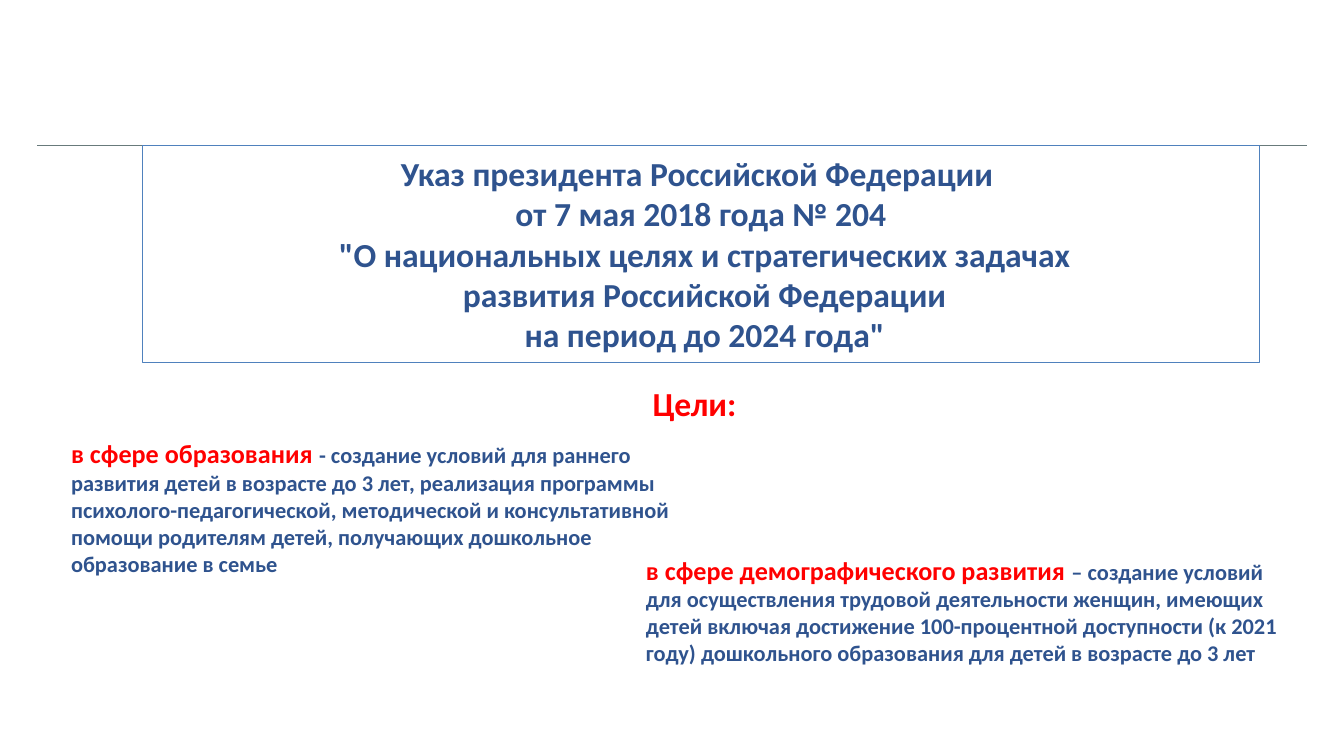
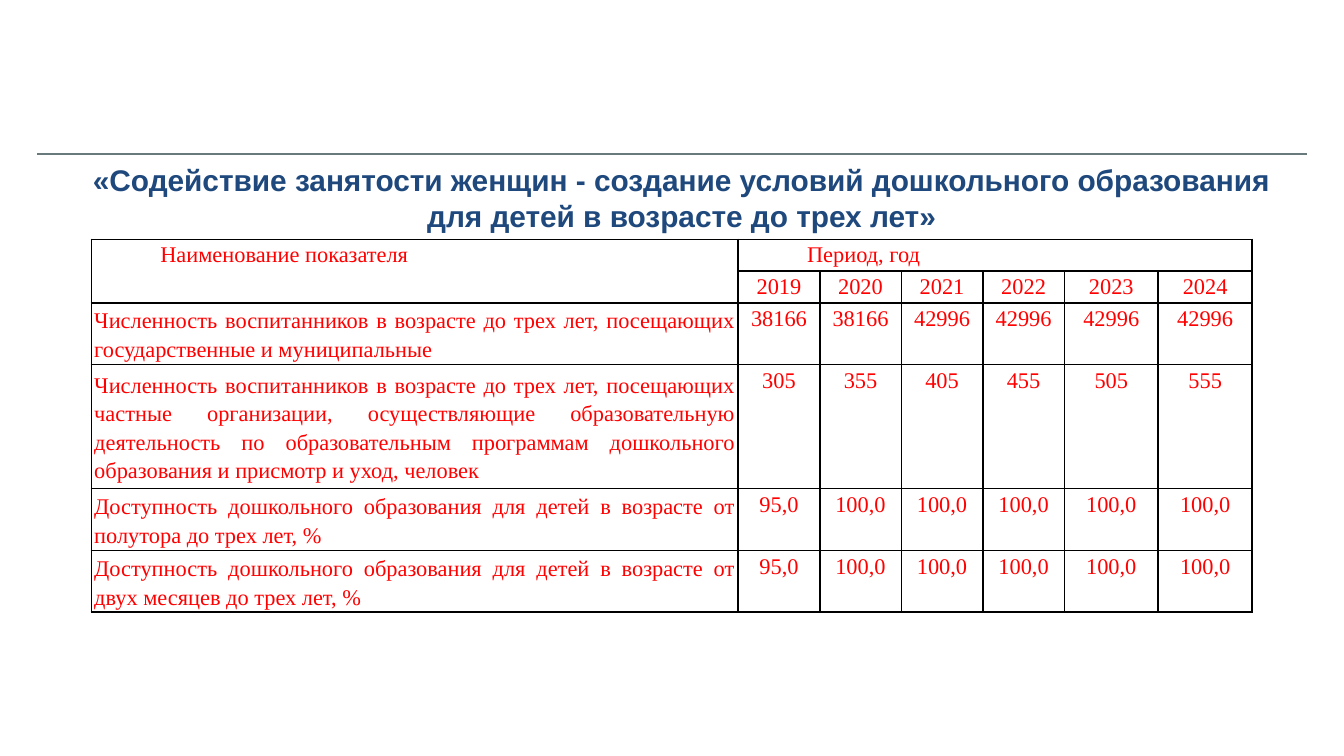
from pptx import Presentation
from pptx.dml.color import RGBColor
from pptx.enum.shapes import MSO_CONNECTOR, MSO_SHAPE
from pptx.enum.text import MSO_ANCHOR, PP_ALIGN
from pptx.oxml.ns import qn
from pptx.util import Pt
from lxml.etree import SubElement

COLORS = {
    "navy": "2F538E",
    "title": "1F497D",
    "red": "FF0000",
    "frame": "4F81BD",
    "rule": "687A7B",
    "black": "000000",
}
LEFT, CENTER, JUSTIFY = PP_ALIGN.LEFT, PP_ALIGN.CENTER, PP_ALIGN.JUSTIFY


def rgb(name):
    return RGBColor.from_string(COLORS[name])


class Deck:
    """Holds the shared style and the current slide."""

    def __init__(self):
        self.prs = Presentation()
        self.prs.slide_width, self.prs.slide_height = Pt(720), Pt(405)
        self.s = None

    def slide(self, rule_y):
        self.s = self.prs.slides.add_slide(self.prs.slide_layouts[6])
        self.rule(rule_y)

    def rule(self, y):
        line = self.s.shapes.add_connector(
            MSO_CONNECTOR.STRAIGHT, Pt(20), Pt(y), Pt(700), Pt(y))
        line.line.color.rgb = rgb("rule")
        line.line.width = Pt(0.75)
        SubElement(line._element.spPr, qn("a:effectLst"))

    def add_text(self, tf, paragraphs, font="Calibri", bold=True, align=LEFT, spacing=None):
        """Each paragraph is a list of runs (text, size, colour)."""
        for i, runs in enumerate(paragraphs):
            p = tf.paragraphs[0] if i == 0 else tf.add_paragraph()
            p.alignment = align
            if spacing:
                p.line_spacing = spacing
            for text, size, color in runs:
                r = p.add_run()
                r.text = text
                r.font.name, r.font.size, r.font.bold = font, Pt(size), bold
                r.font.color.rgb = rgb(color)

    def text(self, x, y, w, h, paragraphs, anchor=MSO_ANCHOR.TOP, **style):
        tf = self.s.shapes.add_textbox(Pt(x), Pt(y), Pt(w), Pt(h)).text_frame
        tf.word_wrap = True
        tf.vertical_anchor = anchor
        self.add_text(tf, paragraphs, **style)
        return tf

    def frame(self, x, y, w, h, paragraphs):
        sp = self.s.shapes.add_shape(MSO_SHAPE.RECTANGLE, Pt(x), Pt(y), Pt(w), Pt(h))
        sp.shadow.inherit = False
        sp.fill.background()
        sp.line.color.rgb = rgb("frame")
        sp.line.width = Pt(0.75)
        sp.text_frame.word_wrap = True
        self.add_text(sp.text_frame, paragraphs, align=CENTER)

    def table(self, x, y, widths, heights):
        shape = self.s.shapes.add_table(
            len(heights), len(widths), Pt(x), Pt(y), Pt(sum(widths)), Pt(sum(heights)))
        table = shape.table
        for col, w in zip(table.columns, widths):
            col.width = Pt(w)
        for row, h in zip(table.rows, heights):
            row.height = Pt(h)
        for cell in table.iter_cells():
            cell.margin_left = cell.margin_right = Pt(1.5)
            cell.margin_top = cell.margin_bottom = 0
            self.borders(cell)
            cell.fill.background()
        return table

    def borders(self, cell):
        tc_pr = cell._tc.get_or_add_tcPr()
        for side in ("a:lnL", "a:lnR", "a:lnT", "a:lnB"):
            ln = SubElement(tc_pr, qn(side), w=str(Pt(1)))
            fill = SubElement(ln, qn("a:solidFill"))
            SubElement(fill, qn("a:srgbClr"), val=COLORS["black"])

    def cell(self, cell, text, align=CENTER, anchor=MSO_ANCHOR.TOP, indent=0):
        cell.vertical_anchor = anchor
        self.add_text(cell.text_frame, [[(text, 12, "red")]], "Times New Roman",
                      bold=False, align=align, spacing=1.15)
        if indent:
            p_pr = cell.text_frame.paragraphs[0]._p.get_or_add_pPr()
            p_pr.set("marL", "0")
            p_pr.set("indent", str(Pt(indent)))


def goals_slide(deck):
    deck.slide(rule_y=77.8)

    # Decree
    decree = [
        "Указ президента Российской Федерации ",
        "от 7 мая 2018 года № 204",
        " \"О национальных целях и стратегических задачах",
        " развития Российской Федерации",
        " на период до 2024 года\"",
    ]
    deck.frame(76.3, 77.8, 598.5, 116.4, [[(line, 18, "navy")] for line in decree])

    # Goals
    goals = [
        (31, 231, "в сфере образования ",
         "- создание условий для раннего развития детей в возрасте до 3 лет, "
         "реализация программы психолого-педагогической, методической и консультативной "
         "помощи родителям детей, получающих дошкольное образование в семье"),
        (339, 293.3, "в сфере демографического развития ",
         "– создание условий для осуществления трудовой деятельности женщин, имеющих "
         "детей включая достижение 100-процентной доступности (к 2021 году) "
         "дошкольного образования для детей в возрасте до 3 лет"),
    ]
    for x, y, area, goal in goals:
        deck.text(x, y, 360, 82, [[(area, 14, "red"), (goal, 12, "navy")]])
    deck.text(342.5, 201.7, 67, 29, [[("Цели:", 18, "red")]])


def indicators_slide(deck):
    deck.slide(rule_y=82.5)

    # Title
    title = ("«Содействие занятости женщин - создание условий дошкольного образования "
             "для детей в возрасте до трех лет»")
    tf = deck.text(25, 82, 680.5, 47.5, [[(title, 16, "title")]],
                   anchor=MSO_ANCHOR.MIDDLE, font="Arial", align=CENTER)
    tf.margin_left = tf.margin_right = Pt(8.5)
    tf.margin_top = tf.margin_bottom = Pt(4.25)

    # Table header
    table = deck.table(49, 128.2, [346.5] + [43.7] * 4 + [50.3] * 2,
                       [17, 17, 33.2, 66.4, 33, 33])
    table.cell(0, 0).merge(table.cell(1, 0))
    table.cell(0, 1).merge(table.cell(0, 6))
    for col, text in enumerate(("Наименование показателя", "Период, год")):
        deck.cell(table.cell(0, col), text, JUSTIFY, indent=35.4)
    for col in range(1, 7):
        deck.cell(table.cell(1, col), str(2018 + col))

    # Table body
    indicators = [
        ("Численность воспитанников в возрасте до трех лет, посещающих "
         "государственные и муниципальные",
         ["38166"] * 2 + ["42996"] * 4),
        ("Численность воспитанников в возрасте до трех лет, посещающих частные "
         "организации, осуществляющие образовательную деятельность по образовательным "
         "программам дошкольного образования и присмотр и уход, человек",
         ["305", "355", "405", "455", "505", "555"]),
        ("Доступность дошкольного образования для детей в возрасте от полутора "
         "до трех лет, %",
         ["95,0"] + ["100,0"] * 5),
        ("Доступность дошкольного образования для детей в возрасте от двух месяцев "
         "до трех лет, %",
         ["95,0"] + ["100,0"] * 5),
    ]
    for row, (name, values) in enumerate(indicators, 2):
        deck.cell(table.cell(row, 0), name, JUSTIFY, MSO_ANCHOR.MIDDLE)
        for col, value in enumerate(values, 1):
            deck.cell(table.cell(row, col), value)


def main():
    deck = Deck()
    goals_slide(deck)
    indicators_slide(deck)
    deck.prs.save("out.pptx")


if __name__ == "__main__":
    main()
